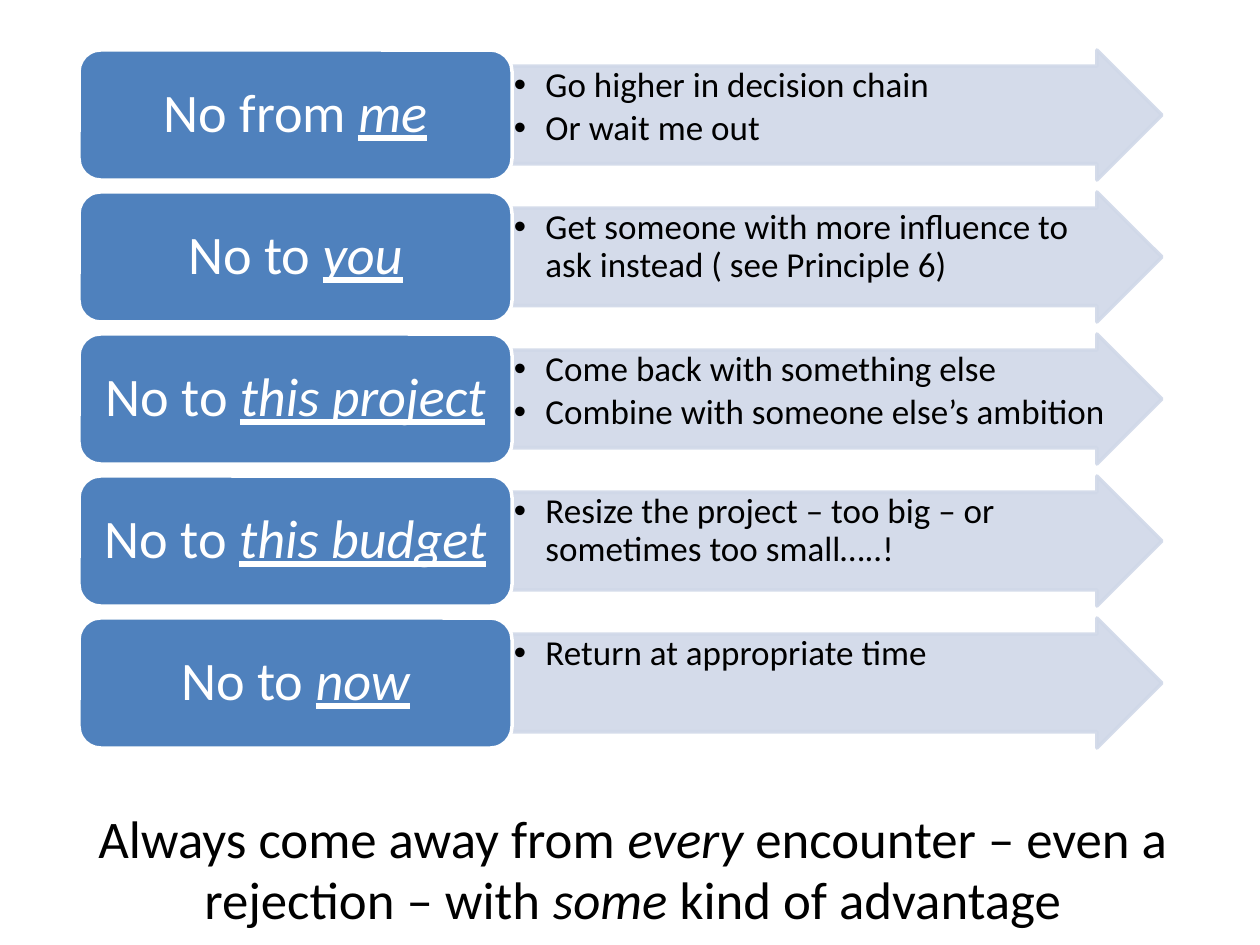
from lxml import etree
from pptx import Presentation
from pptx import util as u
from pptx.dml.color import RGBColor
from pptx.enum import shapes, text
from pptx.oxml.ns import qn

SCALE = 914400 / 126
FONT = "Calibri"
COLORS = {"label": "4F81BD", "arrow": "D0D8E8", "white": "FFFFFF", "black": "000000"}
TOP, PITCH, HEIGHT = 50, 142, 130
LABEL_LEFT, LABEL_WIDTH = 79, 433
ARROW_LEFT, ARROW_WIDTH = 512, 650
ROWS = [
    ("No from ", "me", ["Go higher in decision chain", "Or wait me out"]),
    ("No to ", "you", ["Get someone with more influence to ask instead ( see Principle 6)"]),
    ("No to ", "this project",
     ["Come back with something else", "Combine with someone else’s ambition"]),
    ("No to ", "this budget", ["Resize the project – too big – or sometimes too small…..!"]),
    ("No to ", "now", ["Return at appropriate time"]),
]
CLOSING = [
    ("Always come away from ", False),
    ("every", True),
    (" encounter – even a rejection – with ", False),
    ("some", True),
    (" kind of advantage", False),
]


def px(value):
    return u.Emu(round(value * SCALE))


def rgb(name):
    return RGBColor.from_string(COLORS[name])


def set_frame(box, insets, anchor):
    frame = box.text_frame
    frame.word_wrap = True
    frame.auto_size = text.MSO_AUTO_SIZE.NONE
    frame.vertical_anchor = anchor
    frame.margin_left, frame.margin_top, frame.margin_right, frame.margin_bottom = map(px, insets)
    return frame


def add_bullet(para):
    properties = para._p.get_or_add_pPr()
    properties.set("marL", str(u.Inches(0.25)))
    properties.set("indent", str(-u.Inches(0.25)))
    etree.SubElement(properties, qn("a:buFont")).set("typeface", "Arial")
    etree.SubElement(properties, qn("a:buChar")).set("char", "•")


def write_spans(para, spans, *, size, color, align=text.PP_ALIGN.CENTER,
                spacing=0.9, after=0, underline=False):
    para.alignment = align
    para.line_spacing = spacing
    para.space_before = u.Pt(0)
    para.space_after = u.Pt(after)
    for words, italic in spans:
        span = para.add_run()
        span.text = words
        span.font.name = FONT
        span.font.size = u.Pt(size)
        span.font.color.rgb = rgb(color)
        span.font.italic = italic
        span.font.underline = underline and italic


def set_opacity(box, percent):
    for color in box._element.spPr.iter(qn("a:srgbClr")):
        etree.SubElement(color, qn("a:alpha")).set("val", str(percent * 1000))


def add_block(page, kind, left, top, width, *, fill, line):
    box = page.shapes.add_shape(kind, px(left), px(top), px(width), px(HEIGHT))
    box.shadow.inherit = False
    box.fill.solid()
    box.fill.fore_color.rgb = rgb(fill)
    box.line.color.rgb = rgb(line)
    box.line.width = u.Pt(2)
    return box


def add_arrow(page, top, points):
    box = add_block(page, shapes.MSO_SHAPE.RIGHT_ARROW, ARROW_LEFT, top, ARROW_WIDTH,
                    fill="arrow", line="arrow")
    box.adjustments[0], box.adjustments[1] = 0.75, 0.5
    set_opacity(box, 90)
    frame = set_frame(box, (2, 1, 1, 1), text.MSO_ANCHOR.TOP)
    for index, point in enumerate(points):
        para = frame.add_paragraph() if index else frame.paragraphs[0]
        add_bullet(para)
        write_spans(para, [(point, False)], size=20, color="black",
                    align=text.PP_ALIGN.LEFT, after=3)


def add_label(page, top, lead, emphasis):
    box = add_block(page, shapes.MSO_SHAPE.ROUNDED_RECTANGLE, LABEL_LEFT, top, LABEL_WIDTH,
                    fill="label", line="white")
    frame = set_frame(box, (16, 8, 16, 8), text.MSO_ANCHOR.MIDDLE)
    write_spans(frame.paragraphs[0], [(lead, False), (emphasis, True)],
                size=31, color="white", underline=True)


def place_title(page):
    title = page.shapes.title
    title.left, title.top, title.width, title.height = map(px, (59, 788, 1134, 157))
    frame = set_frame(title, (26, 21, 12, 0), text.MSO_ANCHOR.TOP)
    write_spans(frame.paragraphs[0], CLOSING, size=30.2, color="black", spacing=0.97)


def main():
    deck = Presentation()
    deck.slide_width, deck.slide_height = px(1260), px(945)
    page = deck.slides.add_slide(deck.slide_layouts[5])
    for index, (lead, emphasis, points) in enumerate(ROWS):
        top = TOP + index * PITCH
        add_arrow(page, top, points)
        add_label(page, top, lead, emphasis)
    place_title(page)
    deck.save("out.pptx")


if __name__ == "__main__":
    main()
